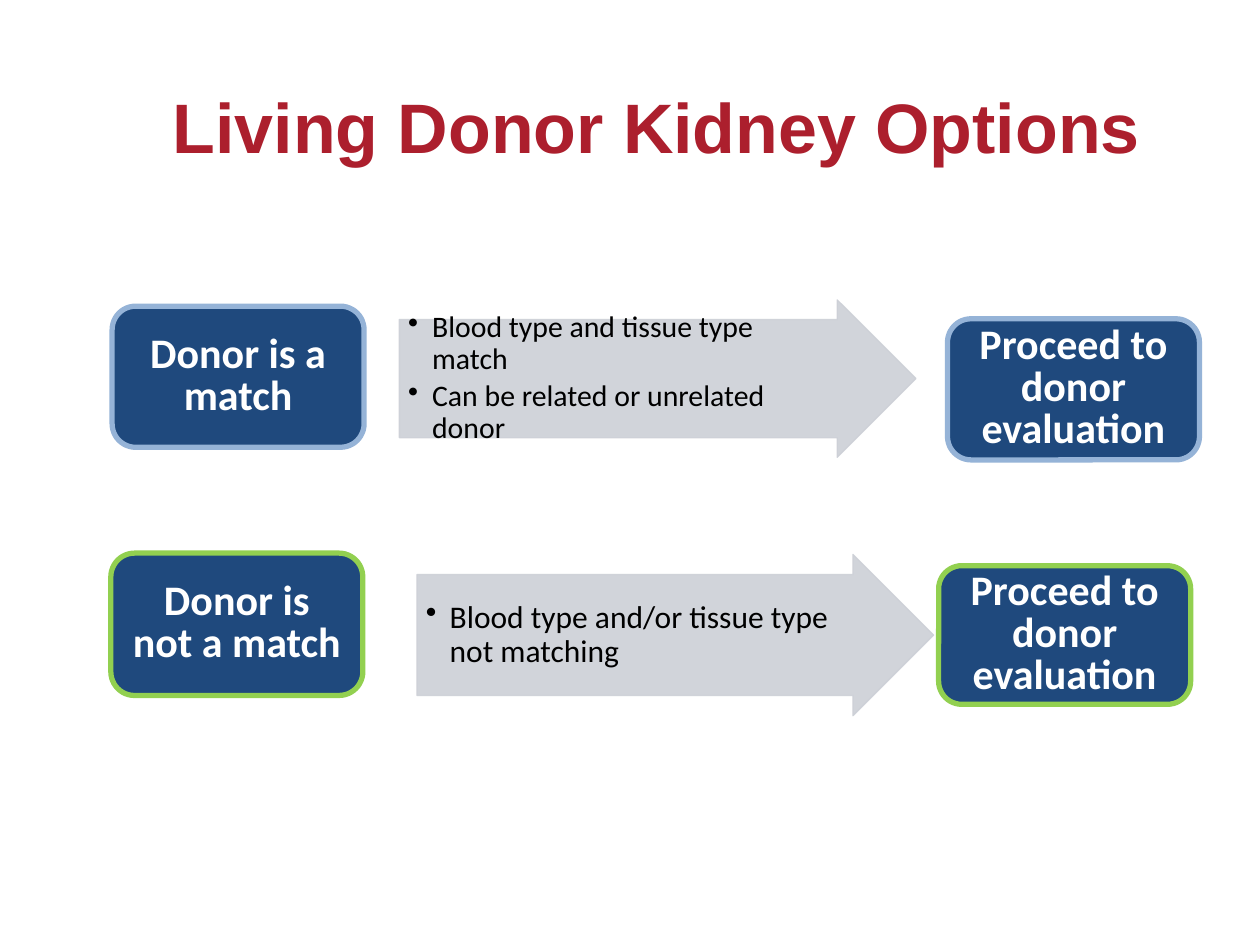
from dataclasses import dataclass

from lxml import etree
from pptx import Presentation
from pptx.dml.color import RGBColor
from pptx.enum.shapes import MSO_SHAPE
from pptx.enum.text import MSO_ANCHOR, MSO_AUTO_SIZE, PP_ALIGN
from pptx.oxml.ns import qn
from pptx.util import Inches, Pt

ROUNDED = MSO_SHAPE.ROUNDED_RECTANGLE
RIGHT_ARROW = MSO_SHAPE.RIGHT_ARROW
MIDDLE, BOTTOM = MSO_ANCHOR.MIDDLE, MSO_ANCHOR.BOTTOM
CENTER, LEFT = PP_ALIGN.CENTER, PP_ALIGN.LEFT
NO_AUTOFIT = MSO_AUTO_SIZE.NONE


@dataclass(frozen=True)
class Theme:
    """Colours, fonts and type sizes of the slide."""
    red: RGBColor = RGBColor(0xAC, 0x1F, 0x2D)
    navy: RGBColor = RGBColor(0x1F, 0x49, 0x7D)
    blue: RGBColor = RGBColor(0x95, 0xB3, 0xD7)
    green: RGBColor = RGBColor(0x92, 0xD0, 0x50)
    gray: RGBColor = RGBColor(0xCD, 0xD0, 0xD7)
    white: RGBColor = RGBColor(0xFF, 0xFF, 0xFF)
    black: RGBColor = RGBColor(0, 0, 0)
    heading_font: str = "Arial"
    body_font: str = "Calibri"
    title_size: int = 40
    step_size: int = 24


THEME = Theme()
STEP_WIDTH = 2
ARROW_WIDTH = 4.1


def style_font(paragraph, name, size, color, bold=False):
    """Set the font of a whole paragraph."""
    font = paragraph.font
    font.name, font.size, font.bold = name, Pt(size), bold
    font.color.rgb = color


def add_title(slide, text):
    """Place and format the slide title."""
    title = slide.shapes.title
    title.left, title.top = Inches(1.05), Inches(0.42)
    title.width, title.height = Inches(8.32), Inches(0.92)
    frame = title.text_frame
    frame.text = text
    frame.auto_size = NO_AUTOFIT
    frame.vertical_anchor = BOTTOM
    frame.margin_top = frame.margin_bottom = 0
    heading = frame.paragraphs[0]
    heading.alignment = CENTER
    heading.line_spacing = 0.9
    style_font(heading, THEME.heading_font, THEME.title_size, THEME.red, True)


def add_block(slide, preset, box, fill, outline, weight):
    """Add a filled, outlined preset shape with wrapped, centred-height text."""
    block = slide.shapes.add_shape(preset, *(Inches(length) for length in box))
    block.shadow.inherit = False
    block.fill.solid()
    block.fill.fore_color.rgb = fill
    block.line.color.rgb = outline
    block.line.width = Pt(weight)
    block.text_frame.word_wrap = True
    block.text_frame.vertical_anchor = MIDDLE
    return block


def add_step(slide, left, top, height, text, outline):
    """Add a navy rounded box that names a step."""
    step = add_block(slide, ROUNDED, (left, top, STEP_WIDTH, height),
                     THEME.navy, outline, 3)
    label = step.text_frame.paragraphs[0]
    label.text = text
    label.alignment = CENTER
    label.line_spacing = Pt(24)
    style_font(label, THEME.body_font, THEME.step_size, THEME.white, True)


def add_bullet(paragraph):
    """Give a paragraph a hanging round bullet."""
    properties = paragraph._p.get_or_add_pPr()
    properties.set("marL", str(Inches(0.25)))
    properties.set("indent", str(Inches(-0.19)))
    etree.SubElement(properties, qn("a:buChar"), char="•")


def add_criteria_arrow(slide, left, top, height, criteria, size):
    """Add a translucent arrow that lists matching criteria."""
    arrow = add_block(slide, RIGHT_ARROW, (left, top, ARROW_WIDTH, height),
                      THEME.gray, THEME.gray, 0.75)
    arrow.adjustments[0], arrow.adjustments[1] = 0.75, 0.5
    for color in arrow._element.spPr.iter(qn("a:srgbClr")):
        etree.SubElement(color, qn("a:alpha"), val="90000")
    frame = arrow.text_frame
    frame.margin_left = frame.margin_top = frame.margin_bottom = Inches(0.01)
    frame.margin_right = Inches(0.32)
    frame.text = "\n".join(criteria)
    for criterion in frame.paragraphs:
        add_bullet(criterion)
        criterion.level = 1
        criterion.alignment = LEFT
        criterion.line_spacing = 0.9
        criterion.space_after = Pt(0.15 * size)
        style_font(criterion, THEME.body_font, size, THEME.black)


def main():
    """Build the donor options slide."""
    deck = Presentation()
    deck.slide_width, deck.slide_height = Inches(10), Inches(7.5)
    slide = deck.slides.add_slide(deck.slide_layouts[5])
    add_title(slide, "Living Donor Kidney Options")

    outcome = "Proceed to donor evaluation"
    add_criteria_arrow(slide, 3.17, 2.38, 1.25,
                       ["Blood type and tissue type match",
                        "Can be related or unrelated donor"], 17)
    add_step(slide, 0.89, 2.43, 1.12, "Donor is a match", THEME.blue)
    add_step(slide, 7.52, 2.53, 1.12, outcome, THEME.blue)

    add_criteria_arrow(slide, 3.31, 4.4, 1.28,
                       ["Blood type and/or tissue type not matching"], 18)
    add_step(slide, 0.88, 4.39, 1.13, "Donor is not a match", THEME.green)
    add_step(slide, 7.45, 4.49, 1.1, outcome, THEME.green)
    deck.save("out.pptx")


if __name__ == "__main__":
    main()
